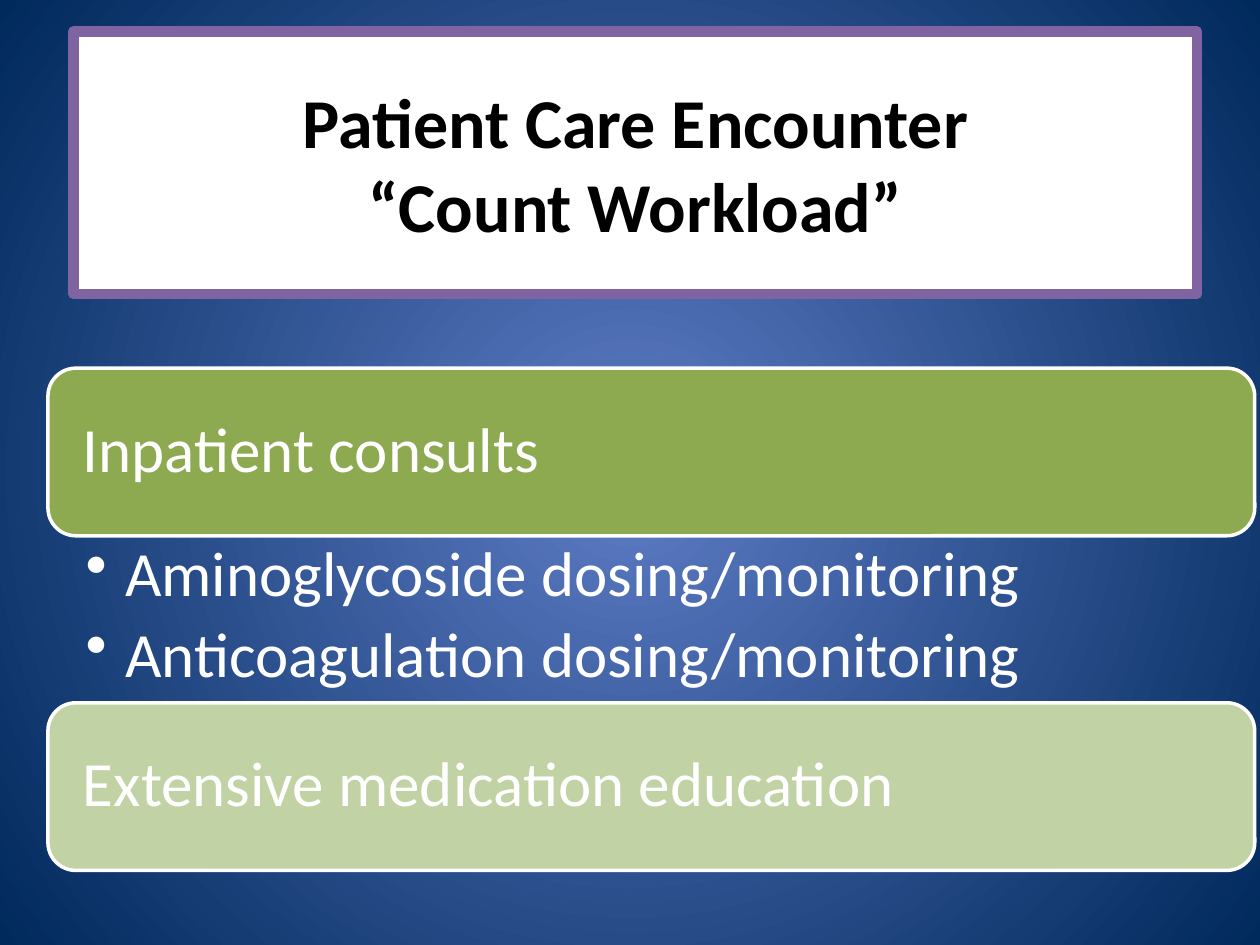
from dataclasses import dataclass

import pptx
import pptx.dml.color
import pptx.enum.shapes
import pptx.enum.text
import pptx.oxml
import pptx.oxml.ns
import pptx.util

Pt = pptx.util.Pt
RGB = pptx.dml.color.RGBColor.from_string
SHAPE = pptx.enum.shapes.MSO_SHAPE
ANCHOR = pptx.enum.text.MSO_ANCHOR
ALIGN = pptx.enum.text.PP_ALIGN
NS = pptx.oxml.ns.nsdecls("a")


@dataclass(frozen=True)
class Theme:
    font: str = "Calibri"
    title_size: int = 40
    body_size: int = 36
    center: str = "5E7CC5"
    edge: str = "00295C"
    white: str = "FFFFFF"
    black: str = "000000"
    purple: str = "8064A2"
    green: str = "8DAA51"
    light_green: str = "C1D3A5"


theme = Theme()


def add_box(kind, box, fill, line, width):
    sp = s.shapes.add_shape(kind, *map(Pt, box))
    sp.shadow.inherit = False
    sp.fill.solid()
    sp.fill.fore_color.rgb = RGB(fill)
    sp.line.color.rgb = RGB(line)
    sp.line.width = Pt(width)
    sp.text_frame.word_wrap = True
    sp.text_frame.vertical_anchor = ANCHOR.MIDDLE
    return sp


def add_run(p, text, size, color, bold=False):
    r = p.add_run()
    r.text = text
    r.font.name = theme.font
    r.font.size = Pt(size)
    r.font.bold = bold
    r.font.color.rgb = RGB(color)


prs = pptx.Presentation()
prs.slide_width, prs.slide_height = Pt(720), Pt(540)
s = prs.slides.add_slide(prs.slide_layouts[6])

# Background: radial gradient from the slide centre
fill = s.background.fill
fill.gradient()
for stop, color, position in zip(fill.gradient_stops, (theme.center, theme.edge), (0, 1)):
    stop.color.rgb = RGB(color)
    stop.position = position
grad = s.element.find(".//" + pptx.oxml.ns.qn("a:gradFill"))
lin = grad.find(pptx.oxml.ns.qn("a:lin"))
grad.replace(lin, pptx.oxml.parse_xml(
    f'<a:path {NS} path="circle">'
    '<a:fillToRect l="50000" t="50000" r="50000" b="50000"/></a:path>'))

# Section bars, with the bullets between them
left, width, bar_height = 27.4, 689.6, 95.8
bars = [
    (210.4, "Inpatient consults", theme.green),
    (401.6, "Extensive medication education", theme.light_green),
]
for top, text, color in bars:
    sp = add_box(SHAPE.ROUNDED_RECTANGLE, (left, top, width, bar_height), color, theme.white, 2)
    tf = sp.text_frame
    tf.margin_left = tf.margin_right = Pt(15.4)
    p = tf.paragraphs[0]
    p.alignment = ALIGN.LEFT
    p.line_spacing = 0.9
    add_run(p, text, theme.body_size, theme.white)

# Consult types
bullets = ["Aminoglycoside dosing/monitoring", "Anticoagulation dosing/monitoring"]
sp = s.shapes.add_textbox(Pt(left), Pt(306.2), Pt(width), Pt(95.4))
tf = sp.text_frame
tf.word_wrap = True
tf.margin_left, tf.margin_right = Pt(21.6), Pt(20.2)
tf.margin_top = tf.margin_bottom = Pt(3.6)
for i, text in enumerate(bullets):
    p = tf.paragraphs[0] if i == 0 else tf.add_paragraph()
    p.level = 1
    p.line_spacing = 0.9
    p.space_after = Pt(7.2)
    pPr = p._p.get_or_add_pPr()
    pPr.set("marL", str(Pt(22.5)))
    pPr.set("indent", str(Pt(-22.5)))
    pPr.append(pptx.oxml.parse_xml(f'<a:buChar {NS} char="•"/>'))
    add_run(p, text, theme.body_size, theme.white)

# Title in a purple frame with rounded line joins
sp = add_box(SHAPE.RECTANGLE, (42, 18, 642, 150), theme.white, theme.purple, 6)
sp.line._get_or_add_ln().append(pptx.oxml.parse_xml(f"<a:round {NS}/>"))
p = sp.text_frame.paragraphs[0]
p.alignment = ALIGN.CENTER
add_run(p, "Patient Care Encounter", theme.title_size, theme.black, True)
p.add_line_break()
add_run(p, "“Count Workload”", theme.title_size, theme.black, True)

prs.save("out.pptx")
